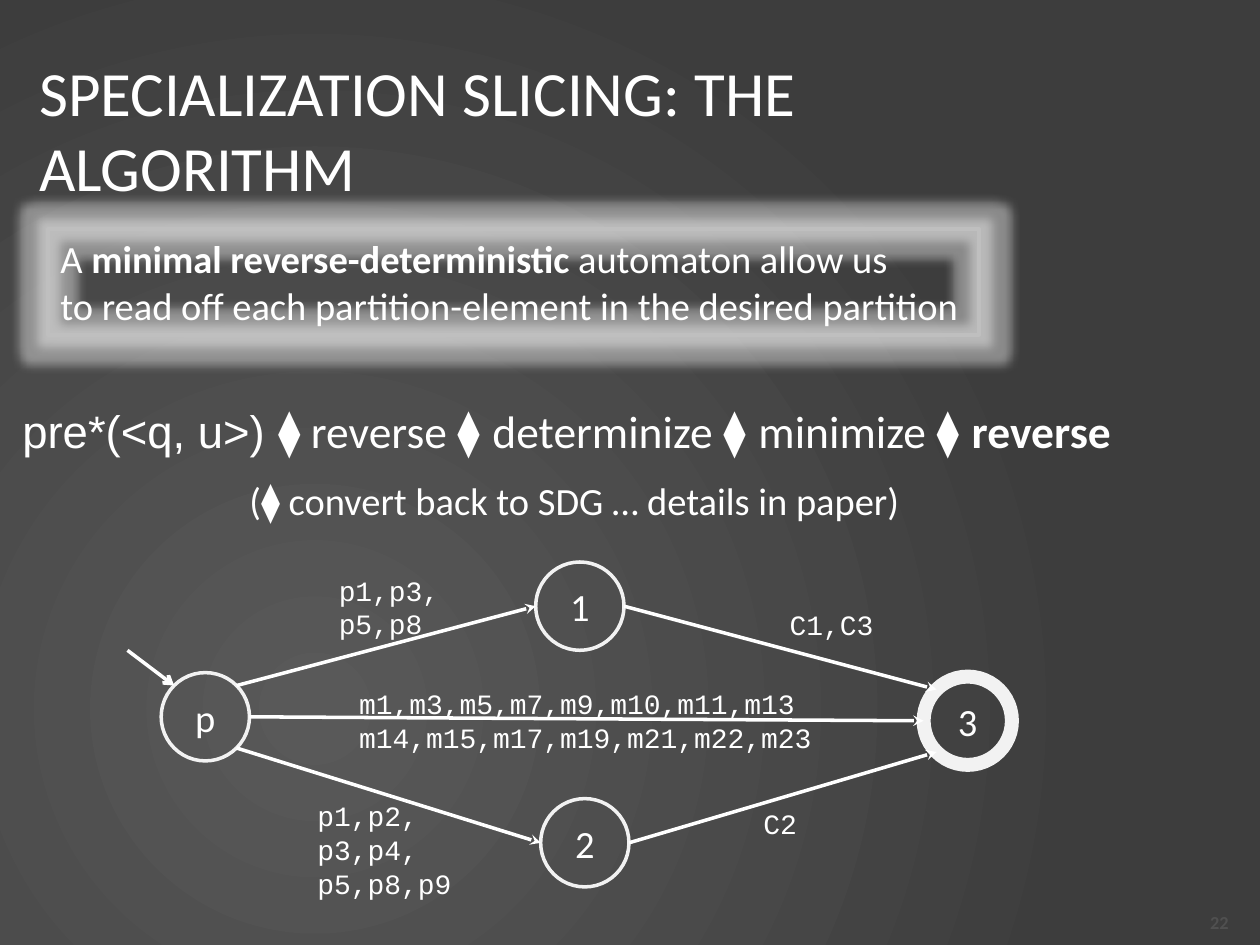
from math import cos, radians, sin

from pptx import Presentation
from pptx.dml.color import RGBColor
from pptx.enum.shapes import MSO_CONNECTOR as Connector, MSO_SHAPE as Shape
from pptx.enum.text import MSO_ANCHOR as Anchor, PP_ALIGN as Align
from pptx.oxml.ns import qn
from pptx.util import Cm, Pt
from lxml.etree import SubElement

COLORS = {
    "text": "FFFFFF",
    "edge": "FFFFFF",
    "state": "F2F2F2",
    "frame": "BFBFBF",
    "glow": "FFFFFF",
    "number": "505050",
    "center": "595959",
    "rim": "3D3D3D",
}
STATE_SIZE = 1.78
RIGHT, LOWER_RIGHT, LOWER_LEFT, LEFT, UPPER_LEFT, UPPER_RIGHT = 0, 45, 135, 180, 225, 315


def rgb(name):
    return RGBColor.from_string(COLORS[name])


def set_background(slide):
    """Radial gradient centred in the lower left of the slide."""
    fill = slide.background.fill
    fill.gradient()
    for stop, name, position in zip(fill.gradient_stops, ("center", "rim"), (0, 1)):
        stop.color.rgb = rgb(name)
        stop.position = position
    gradient = slide.element.find(".//" + qn("a:gradFill"))
    gradient.remove(gradient.find(qn("a:lin")))
    circle = SubElement(gradient, qn("a:path"), path="circle")
    SubElement(circle, qn("a:fillToRect"), l="50000", t="100000", r="100000", b="50000")


def write(frame, lines, size, font="Calibri", color="text", align=Align.LEFT,
          anchor=Anchor.TOP, wrap=False):
    """Each line is a list of runs: (text, font or None for the default, bold)."""
    frame.word_wrap = wrap
    frame.vertical_anchor = anchor
    for index, runs in enumerate(lines):
        paragraph = frame.add_paragraph() if index else frame.paragraphs[0]
        paragraph.alignment = align
        for text, run_font, bold in runs:
            run = paragraph.add_run()
            run.text = text
            run.font.name = run_font or font
            run.font.size = Pt(size)
            run.font.bold = bold
            run.font.color.rgb = rgb(color)


def plain(*lines):
    return [[(line, None, False)] for line in lines]


def add_text(slide, place, lines, size, **style):
    frame = slide.shapes.add_textbox(*map(Cm, place)).text_frame
    write(frame, lines, size, **style)
    return frame


def add_outline(slide, kind, place, color, width):
    shape = slide.shapes.add_shape(kind, *map(Cm, place))
    shape.shadow.inherit = False
    shape.fill.background()
    shape.line.color.rgb = rgb(color)
    shape.line.width = Pt(width)
    return shape


def add_glowing_claim(slide, place, lines):
    box = add_outline(slide, Shape.RECTANGLE, place, "frame", 2)
    effects = box.element.spPr.find(qn("a:effectLst"))
    glow = SubElement(effects, qn("a:glow"), rad=str(Pt(11)))
    color = SubElement(glow, qn("a:srgbClr"), val=COLORS["glow"])
    SubElement(color, qn("a:alpha"), val="40000")
    write(box.text_frame, lines, 22)


def add_state(slide, name, left, top, width):
    state = add_outline(slide, Shape.OVAL, (left, top, STATE_SIZE, STATE_SIZE), "state", width)
    write(state.text_frame, plain(name), 22, align=Align.CENTER, anchor=Anchor.MIDDLE)


def rim_point(corner, angle):
    """Point on a state's circle, with the angle running clockwise from the right."""
    radius = STATE_SIZE / 2
    return (corner[0] + radius + radius * cos(radians(angle)),
            corner[1] + radius + radius * sin(radians(angle)))


def add_arrow(slide, start, end, head="stealth"):
    arrow = slide.shapes.add_connector(Connector.STRAIGHT, *map(Cm, start + end))
    arrow.line.color.rgb = rgb("edge")
    arrow.line.width = Pt(2)
    SubElement(arrow.line._get_or_add_ln(), qn("a:tailEnd"), type=head)
    SubElement(arrow.element.spPr, qn("a:effectLst"))


def add_automaton(slide):
    corners = {"p": (3.25, 13.56), "1": (10.8, 11.33), "2": (10.9, 16.1), "3": (18.62, 13.64)}
    for name, corner in corners.items():
        add_state(slide, name, *corner, width=8 if name == "3" else 2)

    for source, leave, target, enter in (
        ("p", UPPER_RIGHT, "1", LEFT),
        ("p", LOWER_RIGHT, "2", LEFT),
        ("2", RIGHT, "3", LOWER_LEFT),
        ("1", RIGHT, "3", UPPER_LEFT),
        ("p", RIGHT, "3", LEFT),
    ):
        add_arrow(slide, rim_point(corners[source], leave), rim_point(corners[target], enter))
    add_arrow(slide, (2.57, 13.11), rim_point(corners["p"], UPPER_LEFT), "arrow")

    for place, lines in (
        ((6.58, 11.43, 2.57, 1.63), ("p1,p3,", "p5,p8")),
        ((6.15, 15.98, 3.25, 2.31), ("p1,p2,", "p3,p4,", "p5,p8,p9")),
        ((15.14, 16.13, 1.19, 0.94), ("C2",)),
        ((15.67, 12.12, 2.24, 0.94), ("C1,C3",)),
        ((6.99, 13.72, 9.78, 1.63),
         ("m1,m3,m5,m7,m9,m10,m11,m13", "m14,m15,m17,m19,m21,m22,m23")),
    ):
        add_text(slide, place, plain(*lines), 16, font="Courier New")


def main():
    deck = Presentation()
    deck.slide_width, deck.slide_height = Cm(25.4), Cm(19.05)
    slide = deck.slides.add_slide(deck.slide_layouts[6])
    set_background(slide)

    title = add_text(slide, (0.79, 0.79, 15.72, 3.61),
                     plain("SPECIALIZATION SLICING: THE ALGORITHM"), 36,
                     anchor=Anchor.MIDDLE, wrap=True)
    title.margin_left = title.margin_right = 0

    add_glowing_claim(slide, (0.97, 4.62, 18.77, 2.13), [
        [("A ", None, False), ("minimal reverse-deterministic", None, True),
         (" automaton allow us", None, False)],
        *plain("to read off each partition-element in the desired partition"),
    ])

    diamond = ("⧫ ", "Arial", False)
    add_text(slide, (0.2, 8, 24.99, 1.37), [[
        ("pre*(<q, u>) ⧫", "Arial", False), (" reverse ", None, False),
        diamond, ("determinize ", None, False),
        diamond, ("minimize ", None, False),
        diamond, ("reverse", None, True),
    ]], 26)
    add_text(slide, (4.78, 9.5, 14.83, 1.19), [[
        ("(", None, False), ("⧫", "Arial", False),
        (" convert back to SDG … details in paper)", None, False),
    ]], 22)

    add_automaton(slide)
    add_text(slide, (23.5, 18.15, 1.52, 0.9), [[("22", None, True)]], 10.5,
             color="number", align=Align.RIGHT, anchor=Anchor.MIDDLE, wrap=True)
    deck.save("out.pptx")


if __name__ == "__main__":
    main()
